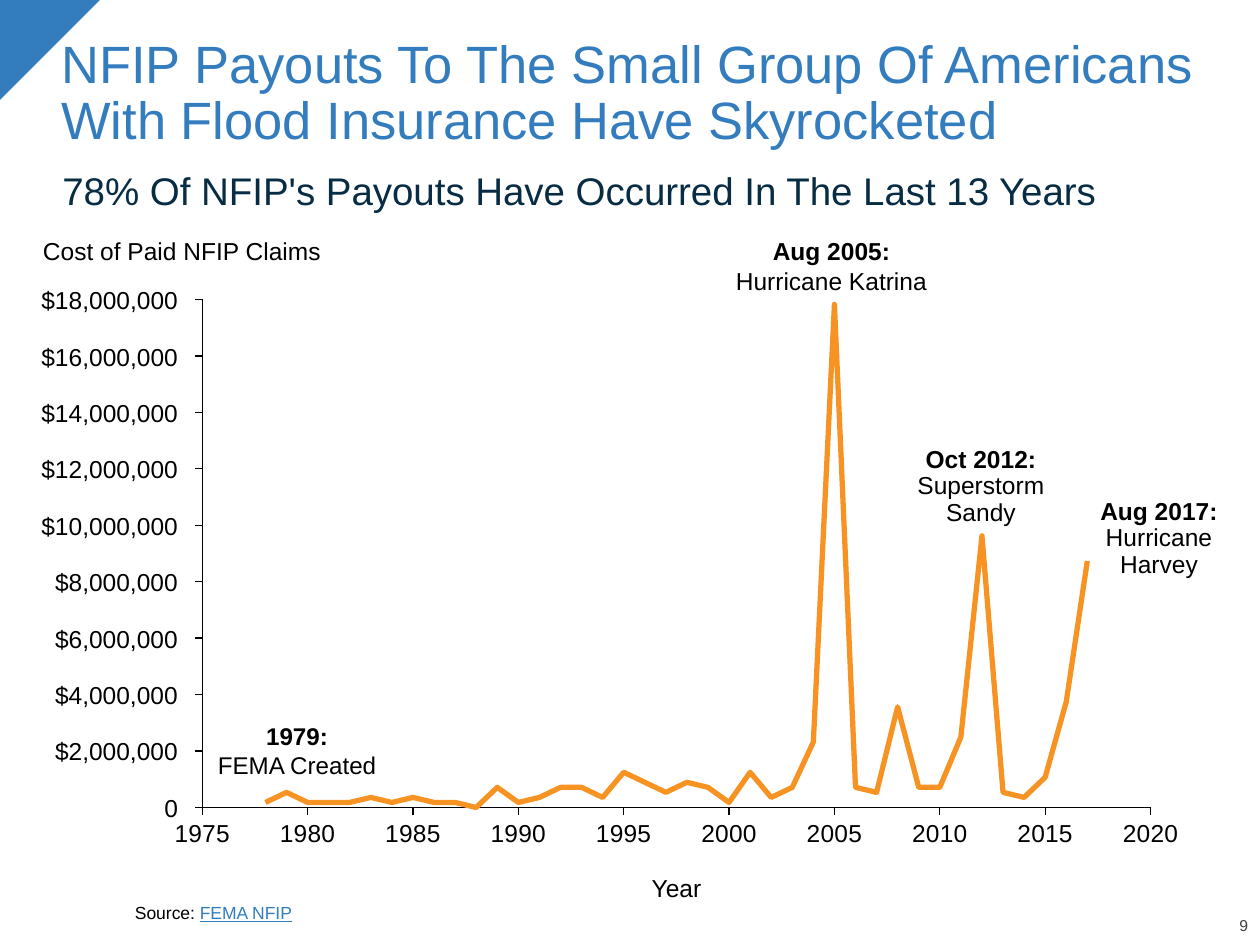
import dataclasses

import lxml.etree
import pptx
import pptx.chart.data
import pptx.dml.color
import pptx.enum.chart
import pptx.enum.shapes
import pptx.enum.text
import pptx.oxml.ns
import pptx.util

ALIGN = pptx.enum.text.PP_ALIGN
ANCHOR = pptx.enum.text.MSO_ANCHOR
qn = pptx.oxml.ns.qn

FIRST_YEAR = 1978
PAYOUTS = [
    1, 3, 1, 1, 1, 2, 1, 2, 1, 1,
    0, 4, 1, 2, 4, 4, 2, 7, 5, 3,
    5, 4, 1, 7, 2, 4, 13, 100, 4, 3,
    20, 4, 4, 14, 54, 3, 2, 6, 21, 49,
]


@dataclasses.dataclass(frozen=True)
class Theme:
    """Colours, font and type sizes of the slide."""
    font: str = "Arial"
    blue: str = "337DBE"
    navy: str = "072C44"
    orange: str = "F69322"
    black: str = "000000"
    grey: str = "404040"
    title: float = 30
    subtitle: float = 22
    label: float = 14
    fema: float = 13.8
    source: float = 10
    number: float = 9


THEME = Theme()


def px(n):
    """Turn pixels into EMU."""
    return pptx.util.Emu(round(n * 914400 / 126))


def rgb(code):
    """Turn a hex code into a colour."""
    return pptx.dml.color.RGBColor.from_string(code)


def style_font(font, size, color):
    """Set the typeface, size and colour of a font."""
    font.name = THEME.font
    font.size = pptx.util.Pt(size)
    font.color.rgb = rgb(color)


def add_text(s, box, lines, size=THEME.label, color=THEME.black, align=ALIGN.LEFT,
             anchor=ANCHOR.TOP, inset=True, wrap=False, spacing=1.0):
    """Add a text box with one paragraph per line and return its paragraphs."""
    tf = s.shapes.add_textbox(*map(px, box)).text_frame
    tf.word_wrap = wrap
    tf.vertical_anchor = anchor
    if not inset:
        tf.margin_left = tf.margin_right = tf.margin_top = tf.margin_bottom = 0
    tf.text = "\n".join(lines)
    for p in tf.paragraphs:
        p.alignment = align
        p.line_spacing = spacing
        style_font(p.font, size, color)
    return tf.paragraphs


def add_event(s, box, date, lines, size=THEME.label, spacing=1.0):
    """Add a centred note with a bold date above its description."""
    paragraphs = add_text(s, box, [date, *lines], size, align=ALIGN.CENTER, spacing=spacing)
    paragraphs[0].font.bold = True


def add_corner(s):
    """Add the blue triangle in the top left corner."""
    shape = s.shapes.add_shape(pptx.enum.shapes.MSO_SHAPE.RIGHT_TRIANGLE,
                               px(-1), px(0), px(101), px(101))
    shape.rotation = 90
    shape.shadow.inherit = False
    shape.fill.solid()
    shape.fill.fore_color.rgb = rgb(THEME.blue)
    shape.line.fill.background()


def style_axis(axis, low, high, step):
    """Set the scale, ticks and line of a chart axis."""
    axis.minimum_scale, axis.maximum_scale, axis.major_unit = low, high, step
    axis.has_major_gridlines = False
    axis.has_title = False
    axis.major_tick_mark = pptx.enum.chart.XL_TICK_MARK.OUTSIDE
    axis.minor_tick_mark = pptx.enum.chart.XL_TICK_MARK.NONE
    axis.format.line.color.rgb = rgb(THEME.black)
    axis.format.line.width = pptx.util.Pt(0.75)
    style_font(axis.tick_labels.font, THEME.label, THEME.black)


def set_plot_area(chart, x, y, w, h):
    """Fix the inner plot area as fractions of the chart."""
    area = chart._chartSpace.chart.plotArea
    for old in area.findall(qn("c:layout")):
        area.remove(old)
    layout = lxml.etree.Element(qn("c:layout"))
    manual = lxml.etree.SubElement(layout, qn("c:manualLayout"))
    values = {"layoutTarget": "inner", "xMode": "edge", "yMode": "edge",
              "x": x, "y": y, "w": w, "h": h}
    for tag, value in values.items():
        lxml.etree.SubElement(manual, qn(f"c:{tag}")).set("val", str(value))
    area.insert(0, layout)


def add_payout_chart(s):
    """Add the line of payouts by year."""
    data = pptx.chart.data.XyChartData()
    series = data.add_series("Series 1")
    for year, payout in enumerate(PAYOUTS, FIRST_YEAR):
        series.add_data_point(year, payout)
    kind = pptx.enum.chart.XL_CHART_TYPE.XY_SCATTER_LINES_NO_MARKERS
    chart = s.shapes.add_chart(kind, px(153), px(288), px(1048), px(571), data).chart
    chart.has_legend = False
    chart.has_title = False
    style_font(chart.font, THEME.source, THEME.black)
    style_axis(chart.category_axis, 1975, 2020, 5)
    chart.category_axis.tick_labels.number_format = "0"
    chart.category_axis.tick_labels.number_format_is_linked = False
    style_axis(chart.value_axis, 0, 101, 11.22)
    chart.value_axis.tick_label_position = pptx.enum.chart.XL_TICK_LABEL_POSITION.NONE
    set_plot_area(chart, 0.047, 0.02, 0.905, 0.89)
    plot = chart.plots[0]
    plot.vary_by_categories = False
    line = plot.series[0]
    line.smooth = False
    line.format.line.color.rgb = rgb(THEME.orange)
    line.format.line.width = pptx.util.Pt(3)


def add_dollar_labels(s):
    """Add the dollar labels beside the value axis."""
    for i in range(10):
        text = f"${2 * i},000,000" if i else "0"
        add_text(s, (34, 793 - 56.4 * i, 144, 29), [text], align=ALIGN.RIGHT,
                 anchor=ANCHOR.MIDDLE, inset=False)


def add_source(s):
    """Add the source line with its underlined name."""
    p = add_text(s, (135, 866, 1058, 57), ["Source: "], THEME.source,
                 anchor=ANCHOR.BOTTOM, inset=False, wrap=True, spacing=0.9)[0]
    r = p.add_run()
    r.text = "FEMA NFIP"
    r.font.underline = True
    r.font.color.rgb = rgb(THEME.blue)


def main():
    """Build the slide and save it."""
    prs = pptx.Presentation()
    prs.slide_width, prs.slide_height = px(1260), px(945)
    s = prs.slides.add_slide(prs.slide_layouts[6])
    add_corner(s)
    add_text(s, (1188, 919, 60, 16), ["9"], THEME.number, THEME.grey, ALIGN.RIGHT,
             ANCHOR.BOTTOM, inset=False, wrap=True, spacing=0.9)
    add_text(s, (49, 29, 1166, 131),
             ["NFIP Payouts To The Small Group Of Americans With Flood Insurance Have Skyrocketed"],
             THEME.title, THEME.blue, anchor=ANCHOR.MIDDLE, wrap=True, spacing=0.9)
    add_text(s, (50, 166, 1166, 54),
             ["78% Of NFIP's Payouts Have Occurred In The Last 13 Years"],
             THEME.subtitle, THEME.navy, anchor=ANCHOR.MIDDLE, wrap=True, spacing=0.9)
    add_payout_chart(s)
    add_dollar_labels(s)
    add_text(s, (646, 873, 61, 29), ["Year"], align=ALIGN.CENTER, inset=False)
    add_text(s, (43, 236, 290, 29), ["Cost of Paid NFIP Claims"],
             anchor=ANCHOR.BOTTOM, inset=False)
    add_event(s, (723, 230, 217, 71), "Aug 2005:", ["Hurricane Katrina"])
    add_event(s, (900, 441, 162, 69), "Oct 2012:", ["Superstorm", "Sandy"], spacing=0.9)
    add_event(s, (1078, 493, 162, 93), "Aug 2017:", ["Hurricane", "Harvey"], spacing=0.9)
    add_source(s)
    add_event(s, (200, 715, 194, 78), "1979:", ["FEMA Created"], THEME.fema)
    prs.save("out.pptx")


if __name__ == "__main__":
    main()
